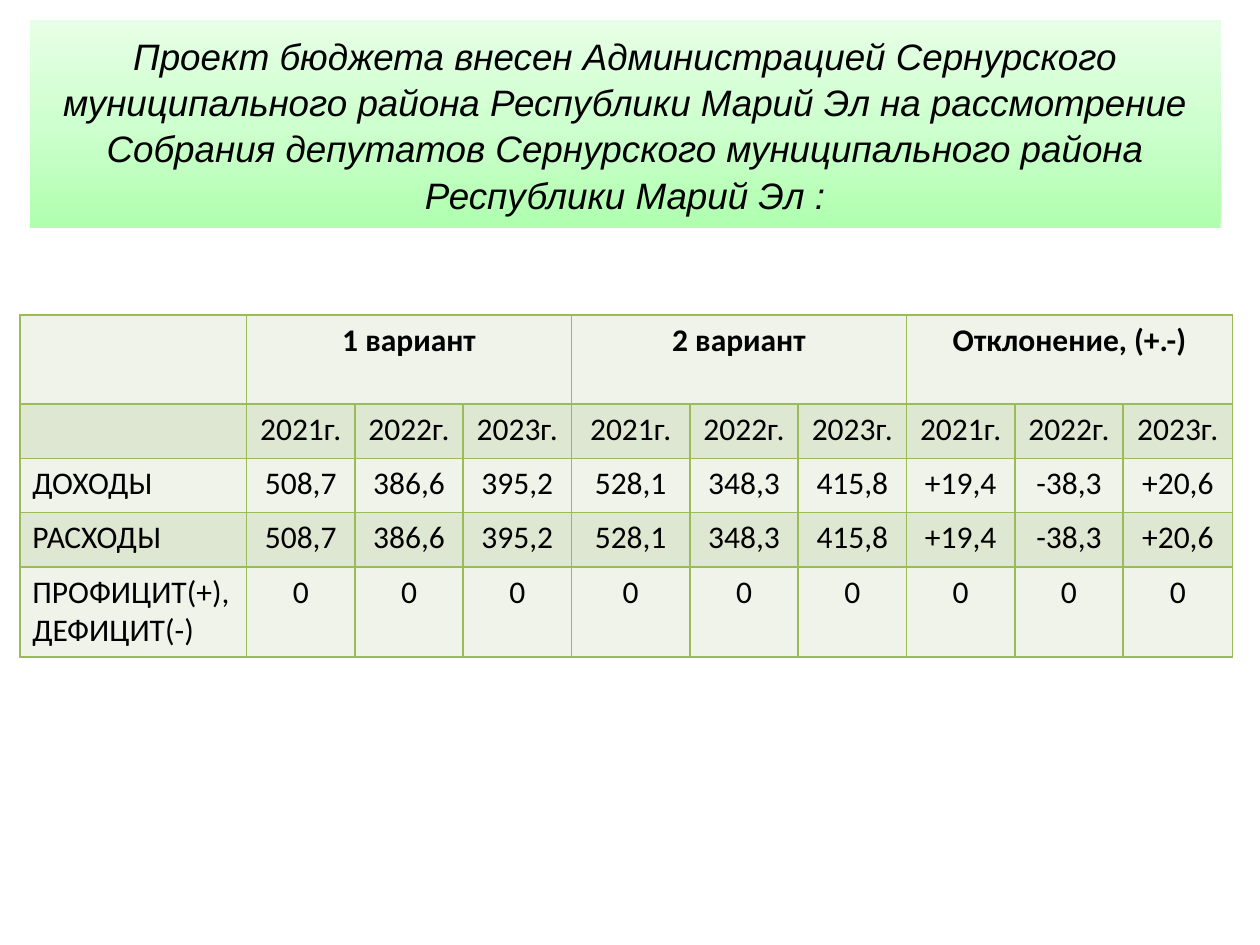
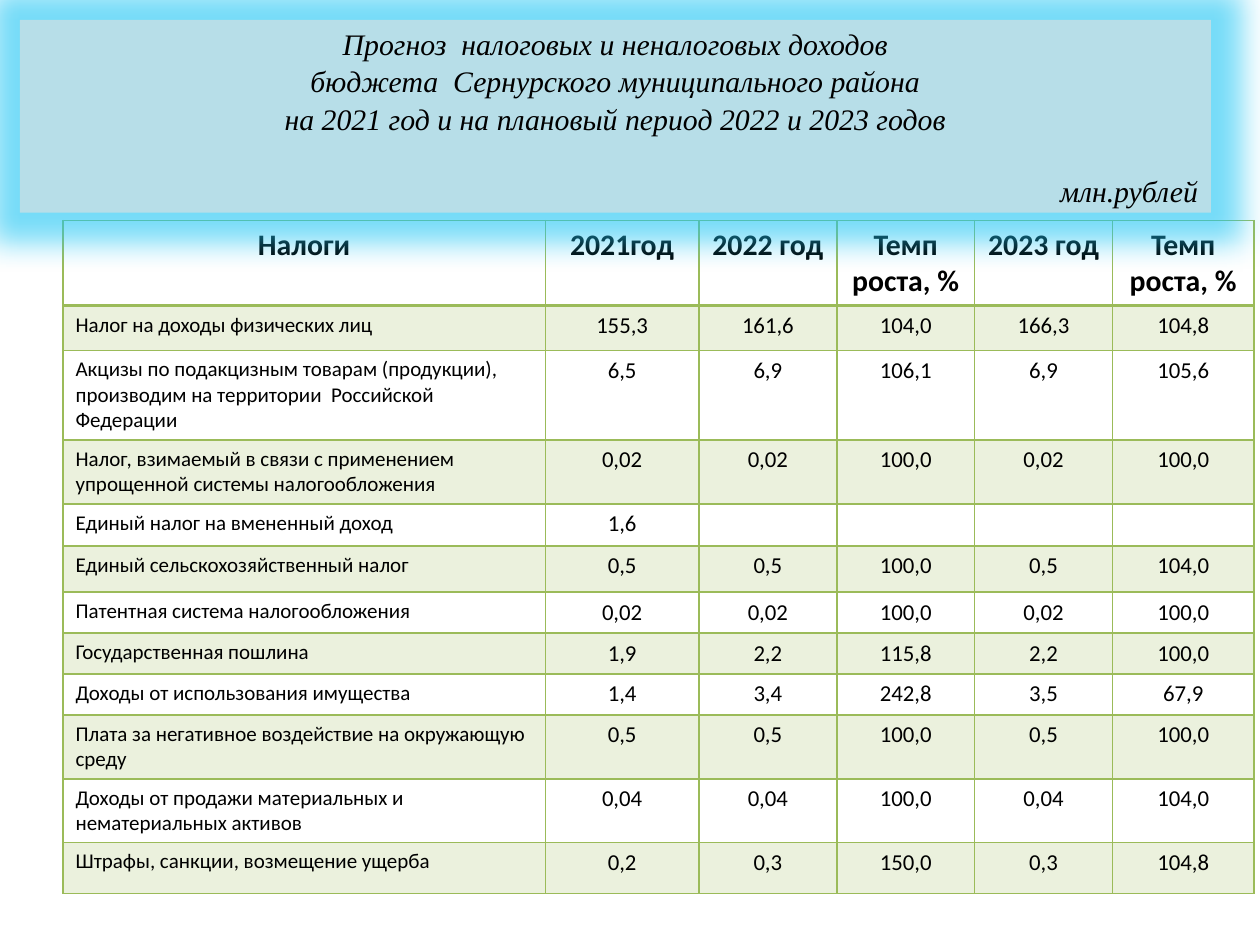
"""Build two budget slides with banner titles and tables."""
from dataclasses import dataclass

from lxml.etree import SubElement
from pptx import Presentation
from pptx.dml.color import RGBColor
from pptx.enum.text import MSO_ANCHOR, MSO_AUTO_SIZE, PP_ALIGN
from pptx.oxml.ns import qn
from pptx.util import Pt


@dataclass(frozen=True)
class Theme:
    """Colours, fonts and type sizes of the deck."""
    ink: str = "000000"
    line: str = "9BBB59"
    pale: str = "EFF3EA"
    band: str = "DEE7D1"
    blue: str = "B7DEE8"
    glow: str = "1CC5F4"
    fade: tuple = ((0, "AFFFAF"), (50, "CEFFCE"), (100, "E7FFE7"))
    body: str = "Calibri"
    sans: str = "Arial"
    serif: str = "Times New Roman"
    large: int = 21
    main: int = 18
    head: int = 17
    value: int = 13
    label: int = 12


def node(base, tag, **attrs):
    """Append a drawing element and return it."""
    return SubElement(base, qn("a:" + tag), {k: str(v) for k, v in attrs.items()})


class Deck:
    """Hold the theme and the current slide, and draw on it."""

    def __init__(self, theme):
        """Start an empty deck."""
        self.theme = theme
        self.show = Presentation()
        self.show.slide_width, self.show.slide_height = Pt(720), Pt(540)
        self.slide = None

    def page(self):
        """Add a title-only slide."""
        self.slide = self.show.slides.add_slide(self.show.slide_layouts[5])

    def label(self, para, text, size, face, bold=False, slant=False):
        """Add one styled run, or only a size for an empty paragraph."""
        if not text:
            node(para._p, "endParaRPr", sz=size * 100)
            return
        run = para.add_run()
        run.text = text
        font = run.font
        font.size, font.name, font.bold, font.italic = Pt(size), face, bold, slant
        font.color.rgb = RGBColor.from_string(self.theme.ink)

    def title(self, box, form, lines, size, face):
        """Place the title above the rest as a filled banner."""
        title = self.slide.shapes.title
        title.left, title.top, title.width, title.height = map(Pt, box)
        node(node(title._element.spPr, "prstGeom", prst=form), "avLst")
        tree = title._element.getparent()
        tree.append(title._element)
        frame = title.text_frame
        frame.word_wrap, frame.auto_size = True, MSO_AUTO_SIZE.NONE
        frame.vertical_anchor = MSO_ANCHOR.MIDDLE
        for num, line in enumerate(lines):
            para = frame.add_paragraph() if num else frame.paragraphs[0]
            para.alignment, para.line_spacing = PP_ALIGN.CENTER, 1.05
            self.label(para, line, size, face, slant=True)
        return title

    def blend(self, shape, stops):
        """Fill a shape with a gradient that runs upward."""
        fill = node(shape._element.spPr, "gradFill", rotWithShape=1)
        group = node(fill, "gsLst")
        for place, tone in stops:
            node(node(group, "gs", pos=place * 1000), "srgbClr", val=tone)
        node(fill, "lin", ang=270 * 60000, scaled=0)

    def halo(self, shape, tone, reach):
        """Add a soft glow around a shape."""
        glow = node(node(shape._element.spPr, "effectLst"), "glow", rad=Pt(reach))
        node(node(glow, "srgbClr", val=tone), "alpha", val=60000)

    def edge(self, cell, top, base):
        """Draw the four borders of a cell."""
        rim = cell._tc.get_or_add_tcPr()
        for side, width in zip("LRTB", (1, 1, top, base)):
            line = node(rim, "ln" + side, w=Pt(width))
            node(node(line, "solidFill"), "srgbClr", val=self.theme.line)

    def paint(self, cell, tone, alpha=100):
        """Fill a cell, or leave it clear when there is no tone."""
        if not tone:
            cell.fill.background()
            return
        cell.fill.solid()
        cell.fill.fore_color.rgb = RGBColor.from_string(tone)
        if alpha < 100:
            tint = cell._tc.tcPr.find(qn("a:solidFill")).find(qn("a:srgbClr"))
            node(tint, "alpha", val=alpha * 1000)

    def table(self, spot, cols, highs, rows, bands, sizes, rule=1, alpha=100):
        """Draw a banded table; sizes are for head, name and value."""
        grid = self.slide.shapes.add_table(
            len(rows), len(cols), *map(Pt, (*spot, sum(cols), sum(highs)))).table
        grid.first_row = grid.horz_banding = False
        for col, width in zip(grid.columns, cols):
            col.width = Pt(width)
        for row, high in zip(grid.rows, highs):
            row.height = Pt(high)
        head, name, value = sizes
        for i, row in enumerate(rows):
            for j, text in enumerate(row):
                cell = grid.cell(i, j)
                para = cell.text_frame.paragraphs[0]
                left = i and not j
                para.alignment = PP_ALIGN.LEFT if left else PP_ALIGN.CENTER
                size = (name if left else value) if i else head
                self.label(para, text, size, self.theme.body, bold=not i)
                self.edge(cell, rule if i == 1 else 1, 1 if i else rule)
                self.paint(cell, bands[i % 2], alpha)
        return grid


def plan(deck):
    """Draw the slide that compares the two variants."""
    theme = deck.theme
    deck.page()
    sums = "508,7 386,6 395,2 528,1 348,3 415,8 +19,4 -38,3 +20,6".split()
    rows = [
        ["", "1 вариант", "", "", "2 вариант", "", "", "Отклонение, (+.-)", "", ""],
        ["", *["2021г.", "2022г.", "2023г."] * 3],
        ["ДОХОДЫ", *sums],
        ["РАСХОДЫ", *sums],
        ["ПРОФИЦИТ(+), ДЕФИЦИТ(-)", *["0"] * 9],
    ]
    cols = [129.6, *[61.9] * 3, 67.7, *[61.9] * 4, 62.6]
    grid = deck.table((11.3, 180), cols, [51, 31, 31, 31, 51.4], rows,
                      (theme.pale, theme.band), [theme.main] * 3)
    for col in range(1, 10, 3):
        grid.cell(0, col).merge(grid.cell(0, col + 2))
    text = ("Проект бюджета внесен Администрацией Сернурского муниципального "
            "района Республики Марий Эл на рассмотрение Собрания депутатов "
            "Сернурского муниципального района Республики Марий Эл :")
    title = deck.title((16.9, 11.4, 680.6, 118.9), "snip2SameRect", [text],
                       theme.large, theme.sans)
    deck.blend(title, theme.fade)


def taxes(deck):
    """Draw the slide with the forecast of revenue."""
    theme = deck.theme
    deck.page()
    data = [
        ("Налог на доходы физических лиц", "155,3 161,6 104,0 166,3 104,8"),
        ("Акцизы по подакцизным товарам (продукции), производим на территории"
         "  Российской Федерации", "6,5 6,9 106,1 6,9 105,6"),
        ("Налог, взимаемый в связи с применением упрощенной системы "
         "налогообложения", "0,02 0,02 100,0 0,02 100,0"),
        ("Единый налог на вмененный доход", "1,6"),
        ("Единый сельскохозяйственный налог", "0,5 0,5 100,0 0,5 104,0"),
        ("Патентная система налогообложения", "0,02 0,02 100,0 0,02 100,0"),
        ("Государственная пошлина", "1,9 2,2 115,8 2,2 100,0"),
        ("Доходы от использования имущества", "1,4 3,4 242,8 3,5 67,9"),
        ("Плата за негативное воздействие на окружающую среду",
         "0,5 0,5 100,0 0,5 100,0"),
        ("Доходы от продажи материальных и нематериальных активов",
         "0,04 0,04 100,0 0,04 104,0"),
        ("Штрафы, санкции, возмещение ущерба", "0,2 0,3 150,0 0,3 104,8"),
    ]
    rows = [["Налоги", "2021год", "2022 год", "Темп роста, %", "2023 год",
             "Темп роста, %"]]
    for name, text in data:
        sums = text.split()
        rows.append([name, *sums, *[""] * (5 - len(sums))])
    highs = [48.6, 25.5, 51.2, 36.2, 24, 26.5, 23.4, 23.4, 23.4, 36.5, 36.5, 29.1]
    deck.table((36, 126), [275.6, 87.8, 78.8, 78.8, 78.8, 80.8], highs, rows,
               (None, theme.line), (theme.head, theme.label, theme.value),
               rule=2, alpha=20)
    lines = ["Прогноз  налоговых и неналоговых доходов",
             "бюджета  Сернурского муниципального района",
             "на 2021 год и на плановый период 2022 и 2023 годов",
             "млн.рублей"]
    title = deck.title((11.3, 11.3, 680.6, 110.2), "rect", lines,
                       theme.head, theme.serif)
    unit = title.text_frame.paragraphs[-1]
    unit.alignment, unit.space_before = PP_ALIGN.RIGHT, Pt(20)
    title.fill.solid()
    title.fill.fore_color.rgb = RGBColor.from_string(theme.blue)
    deck.halo(title, theme.glow, 35)


def main():
    """Build and save the deck."""
    deck = Deck(Theme())
    plan(deck)
    taxes(deck)
    deck.show.save("out.pptx")


if __name__ == "__main__":
    main()
